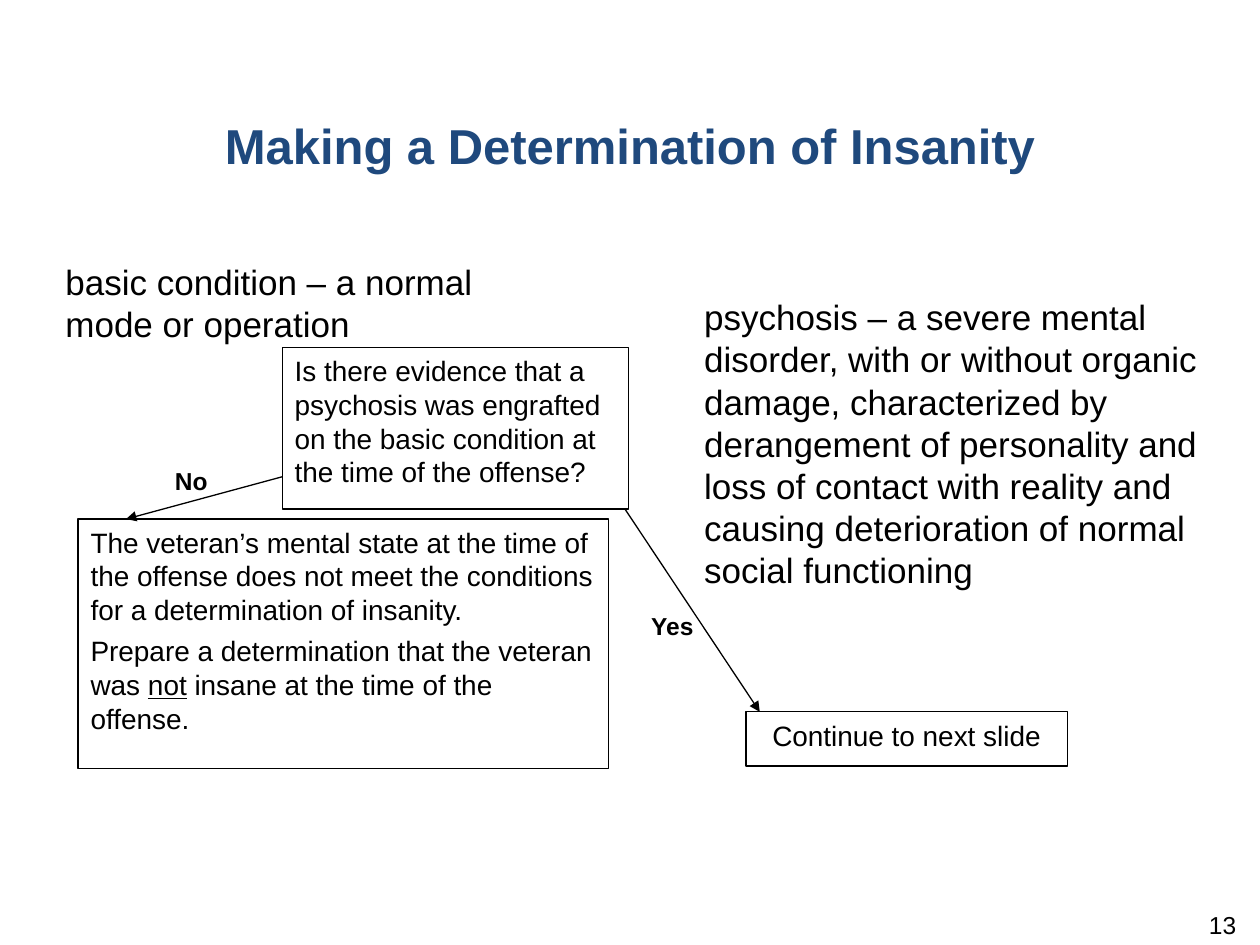
from dataclasses import dataclass

from lxml import etree
from pptx import Presentation
from pptx.dml.color import RGBColor
from pptx.enum.shapes import MSO_CONNECTOR, MSO_SHAPE
from pptx.enum.text import MSO_ANCHOR, PP_ALIGN
from pptx.oxml.ns import qn
from pptx.util import Inches, Pt

RECT = MSO_SHAPE.RECTANGLE
STRAIGHT = MSO_CONNECTOR.STRAIGHT
TOP = MSO_ANCHOR.TOP
LEFT, CENTER, RIGHT = PP_ALIGN.LEFT, PP_ALIGN.CENTER, PP_ALIGN.RIGHT


@dataclass(frozen=True)
class Theme:
    font: str = "Arial"
    ink: RGBColor = RGBColor(0x00, 0x00, 0x00)
    paper: RGBColor = RGBColor(0xFF, 0xFF, 0xFF)
    heading: RGBColor = RGBColor(0x1F, 0x49, 0x7D)
    title_size: int = 28
    definition_size: int = 20
    box_size: int = 16
    label_size: int = 14
    line_width: float = 0.75


THEME = Theme()


def write(sp, paragraphs, size, color=THEME.ink, bold=False, align=LEFT, after=0):
    """Fill a shape with paragraphs, each a list of runs; a run is (text, underlined)."""
    tf = sp.text_frame
    tf.word_wrap = True
    tf.vertical_anchor = TOP
    for i, runs in enumerate(paragraphs):
        p = tf.add_paragraph() if i else tf.paragraphs[0]
        p.alignment = align
        p.space_after = Pt(after)
        for text, underlined in runs:
            r = p.add_run()
            r.text = text
            r.font.name = THEME.font
            r.font.size = Pt(size)
            r.font.bold = bold
            r.font.underline = underlined
            r.font.color.rgb = color


def add_text(slide, box, text, size, **style):
    sp = slide.shapes.add_textbox(*map(Inches, box))
    write(sp, [[(text, False)]], size, **style)
    return sp


def add_box(slide, box, paragraphs, **style):
    sp = slide.shapes.add_shape(RECT, *map(Inches, box))
    sp.shadow.inherit = False
    sp.fill.solid()
    sp.fill.fore_color.rgb = THEME.paper
    sp.line.color.rgb = THEME.ink
    sp.line.width = Pt(THEME.line_width)
    write(sp, paragraphs, THEME.box_size, **style)


def add_arrow(slide, start, end):
    s = slide.shapes.add_connector(STRAIGHT, *map(Inches, start + end))
    s.line.color.rgb = THEME.ink
    s.line.width = Pt(THEME.line_width)
    etree.SubElement(s.line._get_or_add_ln(), qn("a:tailEnd"), type="triangle")
    etree.SubElement(s._element.spPr, qn("a:effectLst"))


def add_branch(slide, label, label_box, start, end):
    """Draw an arrow with its bold answer beside it."""
    add_arrow(slide, start, end)
    add_text(slide, label_box, label, THEME.label_size, bold=True)


def add_decision(slide, question, no, yes):
    """Draw the question and its two outcomes in the boxes given."""
    add_box(slide, question, [[(
        "Is there evidence that a psychosis was engrafted on the basic "
        "condition at the time of the offense?", False)]])
    add_box(slide, yes, [[("Continue to next slide", False)]], align=CENTER)
    add_box(slide, no, [
        [("The veteran’s mental state at the time of the offense does not meet "
          "the conditions for a determination of insanity.", False)],
        [("Prepare a determination that the veteran was ", False),
         ("not", True),
         (" insane at the time of the offense.", False)],
    ], after=4.5)

    left, top, width, height = question
    add_branch(slide, "Yes", (5.07, 4.8, 0.57, 0.34),
               (left + width - 0.03, top + height), (yes[0] + 0.11, yes[1]))
    add_branch(slide, "No", (1.29, 3.65, 0.57, 0.34),
               (left, top + 0.8 * height), (no[0] + 0.38, no[1]))


def add_definitions(slide, condition, psychosis):
    add_text(slide, psychosis,
             "psychosis – a severe mental disorder, with or without organic "
             "damage, characterized by derangement of personality and loss of "
             "contact with reality and causing deterioration of normal social "
             "functioning", THEME.definition_size)
    add_text(slide, condition, "basic condition – a normal mode or operation",
             THEME.definition_size)


def add_page_number(slide, box, number):
    sp = add_text(slide, box, number, THEME.label_size, align=RIGHT)
    sp.text_frame.margin_top = 0


def main():
    prs = Presentation()
    prs.slide_width, prs.slide_height = Inches(10), Inches(7.5)
    slide = prs.slides.add_slide(prs.slide_layouts[6])

    add_decision(slide, question=(2.24, 2.76, 2.75, 1.28),
                 no=(0.62, 4.12, 4.21, 1.98), yes=(5.92, 5.65, 2.55, 0.43))
    add_text(slide, (0, 0.87, 10, 1.19), "Making a Determination of Insanity",
             THEME.title_size, color=THEME.heading, bold=True, align=CENTER)
    add_definitions(slide, condition=(0.42, 2.02, 4.08, 0.77),
                    psychosis=(5.49, 2.3, 4.51, 2.46))
    add_page_number(slide, (7.58, 7.22, 2.33, 0.4), "13")

    prs.save("out.pptx")


if __name__ == "__main__":
    main()
